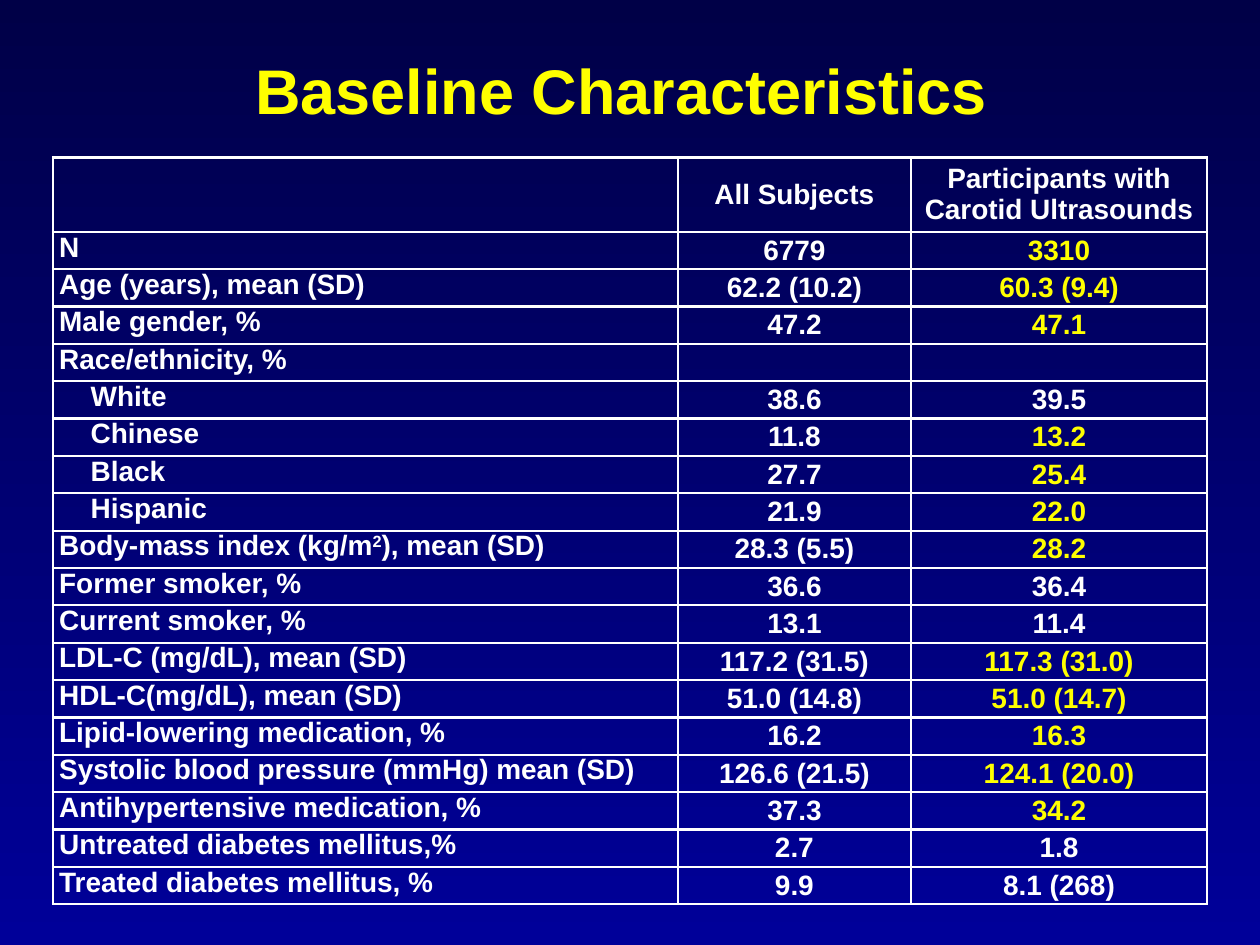
from typing import NamedTuple

from lxml import etree
from pptx import Presentation
from pptx import util as u
from pptx.dml.color import RGBColor
from pptx.enum import text
from pptx.oxml.ns import qn

COLORS = {"top": "000047", "bottom": "000099", "plain": "FFFFFF", "accent": "FFFF00"}
FONT = "Arial"
WIDTH, HEIGHT = u.Inches(10), u.Inches(7.5)
COLUMN_WIDTHS = (4.96, 1.85, 2.35)
HEADER_HEIGHT, BODY_HEIGHT = 0.59, 5.34
BORDER_POINTS = 1.5
HEADINGS = ("", "All Subjects", "Participants with Carotid Ultrasounds")


class Characteristic(NamedTuple):
    label: str
    everyone: str = ""
    ultrasound: str = ""
    highlighted: bool = True
    indented: bool = False
    superscript: str = ""
    label_end: str = ""


ROWS = (
    Characteristic("N", "6779", "3310"),
    Characteristic("Age (years), mean (SD)", "62.2 (10.2)", "60.3 (9.4)"),
    Characteristic("Male gender, %", "47.2", "47.1"),
    Characteristic("Race/ethnicity, %"),
    Characteristic("White", "38.6", "39.5", highlighted=False, indented=True),
    Characteristic("Chinese", "11.8", "13.2", indented=True),
    Characteristic("Black", "27.7", "25.4", indented=True),
    Characteristic("Hispanic", "21.9", "22.0", indented=True),
    Characteristic("Body-mass index (kg/m", "28.3 (5.5)", "28.2",
                   superscript="2", label_end="), mean (SD)"),
    Characteristic("Former smoker, %", "36.6", "36.4", highlighted=False),
    Characteristic("Current smoker, %", "13.1", "11.4", highlighted=False),
    Characteristic("LDL-C (mg/dL), mean (SD)", "117.2 (31.5)", "117.3 (31.0)"),
    Characteristic("HDL-C(mg/dL), mean (SD)", "51.0 (14.8)", "51.0 (14.7)"),
    Characteristic("Lipid-lowering medication, %", "16.2", "16.3"),
    Characteristic("Systolic blood pressure (mmHg) mean (SD)", "126.6 (21.5)", "124.1 (20.0)"),
    Characteristic("Antihypertensive medication, %", "37.3", "34.2"),
    Characteristic("Untreated diabetes mellitus,%", "2.7", "1.8", highlighted=False),
    Characteristic("Treated diabetes mellitus, %", "9.9", "8.1 (268)", highlighted=False),
)


def rgb(name: str) -> RGBColor:
    return RGBColor.from_string(COLORS[name])


def style_paragraph(paragraph, size: float, color: str, centered: bool = True) -> None:
    paragraph.alignment = text.PP_ALIGN.CENTER if centered else text.PP_ALIGN.LEFT
    font = paragraph.font
    font.name, font.size, font.bold = FONT, u.Pt(size), True
    font.color.rgb = rgb(color)


def paint_background(slide) -> None:
    fill = slide.background.fill
    fill.gradient()
    fill.gradient_angle = 270
    for stop, name, position in zip(fill.gradient_stops, ("top", "bottom"), (0, 1)):
        stop.color.rgb = rgb(name)
        stop.position = position


def add_title(slide, wording: str) -> None:
    box = slide.shapes.add_textbox(int(WIDTH * 0.05), u.Inches(0.08),
                                   int(WIDTH * 0.9), u.Inches(1.25))
    frame = box.text_frame
    frame.word_wrap = True
    frame.vertical_anchor = text.MSO_ANCHOR.MIDDLE
    frame.text = wording
    style_paragraph(frame.paragraphs[0], 36, "accent")


def format_cell(cell) -> None:
    """Give the cell narrow margins, a border on each side and no fill."""
    cell.margin_left = cell.margin_right = u.Inches(0.05)
    cell.margin_top = cell.margin_bottom = 0
    properties = cell._tc.get_or_add_tcPr()
    for side in ("a:lnL", "a:lnR", "a:lnT", "a:lnB"):
        line = etree.SubElement(properties, qn(side), w=str(u.Pt(BORDER_POINTS)))
        solid = etree.SubElement(line, qn("a:solidFill"))
        etree.SubElement(solid, qn("a:srgbClr"), val=COLORS["plain"])
    cell.fill.background()


def write_value(cell, wording: str, color: str = "plain") -> None:
    format_cell(cell)
    cell.vertical_anchor = text.MSO_ANCHOR.MIDDLE
    cell.text = wording
    style_paragraph(cell.text_frame.paragraphs[0], 16, color)


def write_label(cell, row: Characteristic) -> None:
    format_cell(cell)
    cell.vertical_anchor = text.MSO_ANCHOR.TOP
    paragraph = cell.text_frame.paragraphs[0]
    style_paragraph(paragraph, 16, "plain", centered=False)
    if row.indented:
        paragraph._p.get_or_add_pPr().set("marL", str(u.Inches(0.25)))
    paragraph.add_run().text = row.label
    if row.superscript:
        raised = paragraph.add_run()
        raised.text = row.superscript
        raised._r.get_or_add_rPr().set("baseline", "30000")
        paragraph.add_run().text = row.label_end


def add_characteristics(slide) -> None:
    frame = slide.shapes.add_table(
        len(ROWS) + 1, len(COLUMN_WIDTHS), u.Inches(0.42), u.Inches(1.25),
        u.Inches(sum(COLUMN_WIDTHS)), u.Inches(HEADER_HEIGHT + BODY_HEIGHT))
    table = frame.table
    table.first_row = table.horz_banding = False
    for column, width in zip(table.columns, COLUMN_WIDTHS):
        column.width = u.Inches(width)
    for table_row in table.rows:
        table_row.height = u.Inches(BODY_HEIGHT / len(ROWS))
    table.rows[0].height = u.Inches(HEADER_HEIGHT)

    for index, heading in enumerate(HEADINGS):
        write_value(table.cell(0, index), heading)
    for index, row in enumerate(ROWS, start=1):
        write_label(table.cell(index, 0), row)
        write_value(table.cell(index, 1), row.everyone)
        write_value(table.cell(index, 2), row.ultrasound,
                    "accent" if row.highlighted else "plain")


def main() -> None:
    presentation = Presentation()
    presentation.slide_width, presentation.slide_height = WIDTH, HEIGHT
    slide = presentation.slides.add_slide(presentation.slide_layouts[6])
    paint_background(slide)
    add_characteristics(slide)
    add_title(slide, "Baseline Characteristics ")
    presentation.save("out.pptx")


if __name__ == "__main__":
    main()
